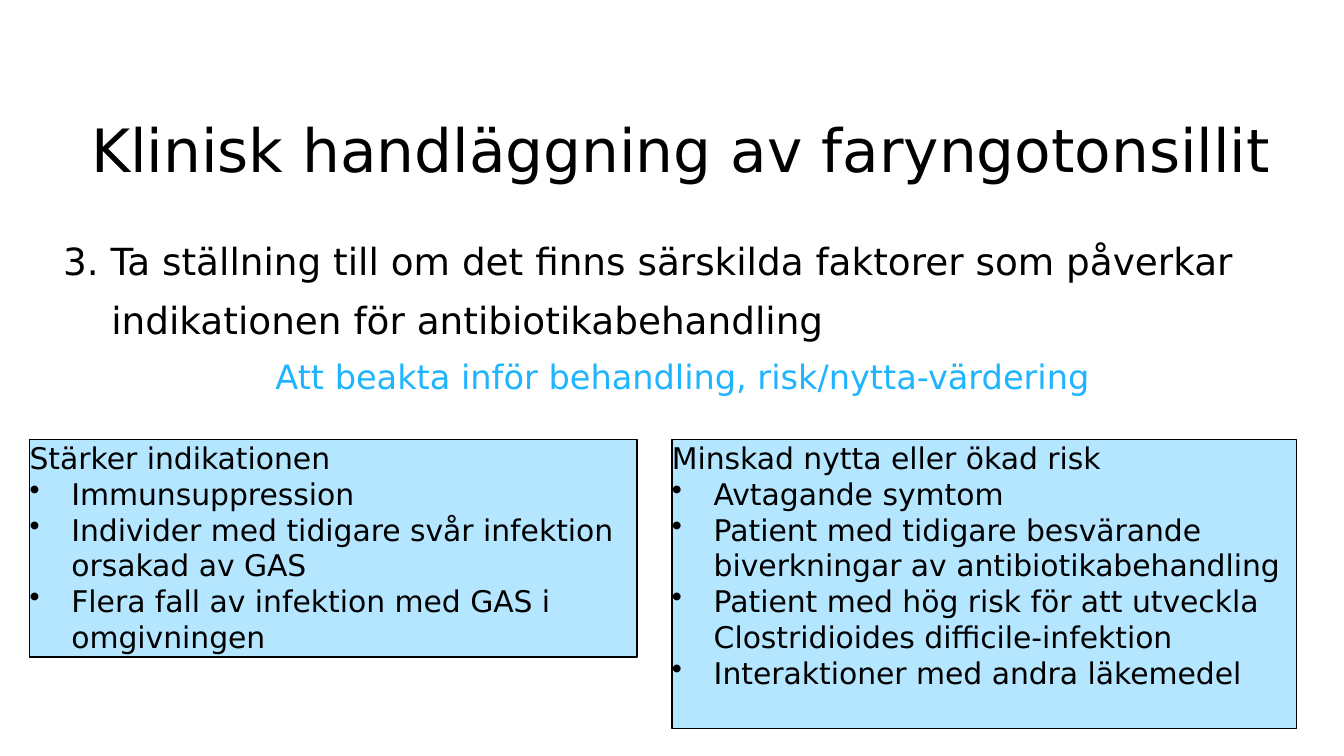
from lxml.etree import SubElement
from pptx import Presentation
from pptx.dml.color import RGBColor
from pptx.enum.shapes import MSO_SHAPE
from pptx.enum.text import MSO_ANCHOR, MSO_AUTO_SIZE, PP_ALIGN
from pptx.oxml.ns import qn
from pptx.util import Cm, Pt

FONT_NAME = "DejaVu Sans"
BLACK = RGBColor(0x00, 0x00, 0x00)
BRIGHT_BLUE = RGBColor(0x1F, 0xB4, 0xFF)
PALE_BLUE = RGBColor(0xB4, 0xE6, 0xFF)

FACTOR_TOP = Cm(8.31)
BULLET_INDENT = Cm(0.79)
STEP_INDENT = Cm(0.91)

STRONGER_INDICATION = [
    "Immunsuppression",
    "Individer med tidigare svår infektion orsakad av GAS",
    "Flera fall av infektion med GAS i omgivningen",
]
LESS_BENEFIT = [
    "Avtagande symtom",
    "Patient med tidigare besvärande biverkningar av antibiotikabehandling",
    "Patient med hög risk för att utveckla Clostridioides difficile-infektion",
    "Interaktioner med andra läkemedel",
]


def place(shape, left, top, width, height):
    shape.left, shape.top = left, top
    shape.width, shape.height = width, height


def prepare_frame(shape):
    frame = shape.text_frame
    frame.word_wrap = True
    frame.auto_size = MSO_AUTO_SIZE.NONE
    frame.vertical_anchor = MSO_ANCHOR.TOP
    return frame


def set_bullet(paragraph, character=None, left=0, first_line=0):
    """Set the indents and the bullet; without a character, no bullet shows."""
    properties = paragraph._p.get_or_add_pPr()
    properties.set("marL", str(left))
    properties.set("indent", str(first_line))
    if character:
        SubElement(properties, qn("a:buChar"), char=character)
    else:
        SubElement(properties, qn("a:buNone"))


def write(paragraph, text, size, color=BLACK, alignment=PP_ALIGN.LEFT):
    paragraph.alignment = alignment
    run = paragraph.add_run()
    run.text = text
    run.font.name = FONT_NAME
    run.font.size = Pt(size)
    run.font.color.rgb = color


def fill_title(title):
    place(title, Cm(1.47), Cm(2.01), Cm(23.39), Cm(2.87))
    write(prepare_frame(title).paragraphs[0],
          "Klinisk handläggning av faryngotonsillit", 32)


def fill_body(body):
    place(body, Cm(0.94), Cm(4.37), Cm(23.93), Cm(7.49))
    frame = prepare_frame(body)
    lines = [
        ("3. Ta ställning till om det finns särskilda faktorer som påverkar",
         20, BLACK, PP_ALIGN.LEFT, 0),
        ("indikationen för antibiotikabehandling",
         20, BLACK, PP_ALIGN.LEFT, STEP_INDENT),
        ("Att beakta inför behandling, risk/nytta-värdering",
         18, BRIGHT_BLUE, PP_ALIGN.CENTER, 0),
    ]
    for index, (text, size, color, alignment, indent) in enumerate(lines):
        paragraph = frame.add_paragraph() if index else frame.paragraphs[0]
        set_bullet(paragraph, left=indent)
        paragraph.space_before = Pt(7.5 if index else 0)
        write(paragraph, text, size, color, alignment)


def add_factor_box(slide, left, width, height, heading, factors):
    box = slide.shapes.add_shape(
        MSO_SHAPE.RECTANGLE, left, FACTOR_TOP, width, height)
    box.shadow.inherit = False
    box.fill.solid()
    box.fill.fore_color.rgb = PALE_BLUE
    box.line.color.rgb = BLACK
    box.line.width = Pt(0.75)

    frame = prepare_frame(box)
    frame.margin_left = frame.margin_right = 0
    frame.margin_top = frame.margin_bottom = 0
    write(frame.paragraphs[0], heading, 16)
    for factor in factors:
        paragraph = frame.add_paragraph()
        set_bullet(paragraph, "•", BULLET_INDENT, -BULLET_INDENT)
        write(paragraph, factor, 16)


def main():
    presentation = Presentation()
    presentation.slide_width = Cm(25.4)
    presentation.slide_height = Cm(14.29)
    slide = presentation.slides.add_slide(presentation.slide_layouts[1])

    fill_title(slide.shapes.title)
    fill_body(slide.placeholders[1])
    add_factor_box(slide, Cm(0.56), Cm(11.48), Cm(4.11),
                   "Stärker indikationen", STRONGER_INDICATION)
    add_factor_box(slide, Cm(12.7), Cm(11.81), Cm(5.46),
                   "Minskad nytta eller ökad risk", LESS_BENEFIT)

    presentation.save("out.pptx")


if __name__ == "__main__":
    main()
